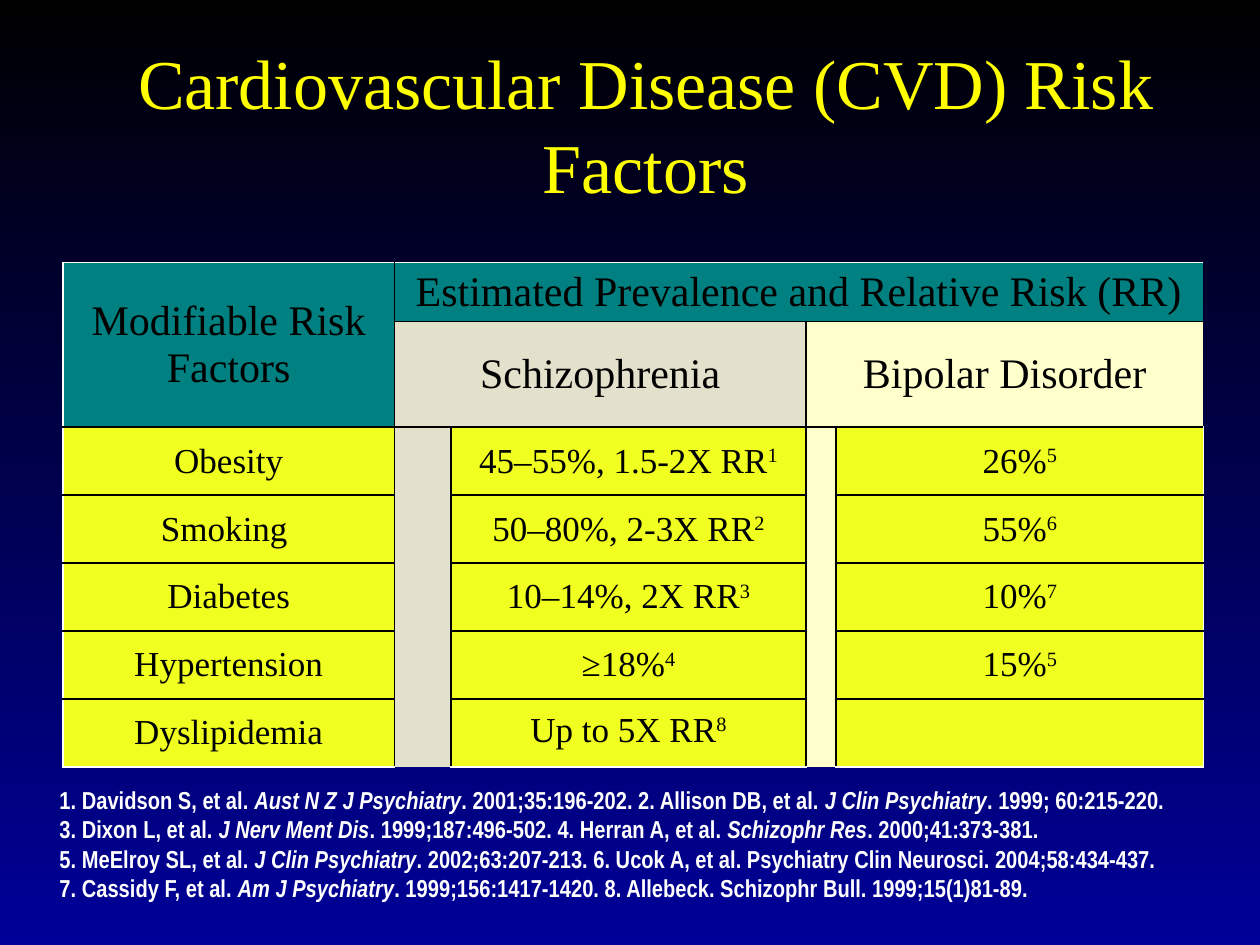
"""Build a slide on cardiovascular risk factors with a prevalence table."""
import pptx
import pptx.dml.color
import pptx.enum.text
import pptx.oxml
import pptx.oxml.ns
import pptx.util

Cm = pptx.util.Cm
Pt = pptx.util.Pt
ALIGN = pptx.enum.text.PP_ALIGN
MIDDLE = pptx.enum.text.MSO_ANCHOR.MIDDLE
SERIF, NARROW = "Times New Roman", "Arial Narrow"
BLACK, WHITE, YELLOW = "000000", "FFFFFF", "FFFF00"
TEAL, BEIGE, CREAM, LEMON = "008080", "E3E0CB", "FFFFCC", "F0FF20"

WIDTHS = [6.68, 1.14, 7.16, 0.58, 7.4]
HEIGHTS = [1.19, 2.13] + [1.37] * 5
FACTORS = [
    ("Obesity", "45–55%, 1.5-2X RR|1", "26%|5"),
    ("Smoking ", "50–80%, 2-3X RR|2", "55%|6"),
    ("Diabetes", "10–14%, 2X RR|3", "10%|7"),
    ("Hypertension", "≥18%|4", "15%|5"),
    ("Dyslipidemia", "Up to 5X RR|8", ""),
]
REFERENCES = [
    "1. Davidson S, et al. |Aust N Z J Psychiatry|. 2001;35:196-202. "
    "2. Allison DB, et al. |J Clin Psychiatry|. 1999; 60:215-220. ",
    "3. Dixon L, et al. |J Nerv Ment Dis|. 1999;187:496-502. "
    "4. Herran A, et al. |Schizophr Res|. 2000;41:373-381. ",
    "5. MeElroy SL, et al. |J Clin Psychiatry|. 2002;63:207-213. "
    "6. Ucok A, et al. Psychiatry Clin Neurosci. 2004;58:434-437. ",
    "7. Cassidy F, et al. |Am J Psychiatry|. 1999;156:1417-1420. "
    "8. Allebeck. Schizophr Bull. 1999;15(1)81-89.",
]


def rgb(value):
    return pptx.dml.color.RGBColor.from_string(value)


class Deck:
    def __init__(self):
        self.prs = pptx.Presentation()
        self.prs.slide_width, self.prs.slide_height = Cm(25.4), Cm(19.05)
        self.s = self.prs.slides.add_slide(self.prs.slide_layouts[5])

    def background(self, top, bottom):
        fill = self.s.background.fill
        fill.gradient()
        fill.gradient_angle = 270
        for stop, color in zip(fill.gradient_stops, (top, bottom)):
            stop.color.rgb = rgb(color)

    def style(self, r, font, size, color, bold=False):
        r.font.name, r.font.size, r.font.bold = font, Pt(size), bold
        r.font.color.rgb = rgb(color)

    def add_runs(self, p, text, mark, *style):
        for i, part in enumerate(text.split("|")):
            r = p.add_run()
            r.text = part
            self.style(r, *style)
            if i % 2:
                mark(r)

    def italic(self, r):
        r.font.italic = True

    def superscript(self, r):
        r._r.get_or_add_rPr().set("baseline", "30000")

    def title(self, text, x, y, w, h):
        sp = self.s.shapes.title
        sp.left, sp.top, sp.width, sp.height = Cm(x), Cm(y), Cm(w), Cm(h)
        tf = sp.text_frame
        tf.text = text
        tf.auto_size = pptx.enum.text.MSO_AUTO_SIZE.NONE
        tf.vertical_anchor = MIDDLE
        p = tf.paragraphs[0]
        p.alignment = ALIGN.CENTER
        self.style(p.runs[0], SERIF, 40, YELLOW)

    def references(self, lines, x, y, w, h):
        tf = self.s.shapes.add_textbox(Cm(x), Cm(y), Cm(w), Cm(h)).text_frame
        tf.word_wrap = True
        p = tf.paragraphs[0]
        for i, line in enumerate(lines):
            if i:
                p.add_line_break()
            self.add_runs(p, line, self.italic, NARROW, 14, WHITE, True)

    def table(self, x, y, widths, heights):
        frame = self.s.shapes.add_table(len(heights), len(widths), Cm(x), Cm(y),
                                        Cm(sum(widths)), Cm(sum(heights)))
        self.tbl = frame.table
        self.tbl.first_row = self.tbl.horz_banding = False
        style_id = self.tbl._tbl.tblPr.find(pptx.oxml.ns.qn("a:tableStyleId"))
        style_id.text = "{2D5ABB26-0587-4C30-8999-92F81FD0307C}"
        for col, w in zip(self.tbl.columns, widths):
            col.width = Cm(w)
        for row, h in zip(self.tbl.rows, heights):
            row.height = Cm(h)

    def border(self, cell, edges):
        tcPr = cell._tc.get_or_add_tcPr()
        for i, (side, color) in enumerate(edges):
            tcPr.insert(i, pptx.oxml.parse_xml(
                f'<a:ln{side} {pptx.oxml.ns.nsdecls("a")} w="12700"><a:solidFill>'
                f'<a:srgbClr val="{color}"/></a:solidFill></a:ln{side}>'))

    def block(self, row, col, rows, cols, fill, text="", size=20, skip=""):
        """Fill a cell or merged area and rule its outer edges, white on the table rim."""
        last_row, last_col = row + rows - 1, col + cols - 1
        rim_row, rim_col = len(self.tbl.rows) - 1, len(self.tbl.columns) - 1
        for i in range(row, last_row + 1):
            for j in range(col, last_col + 1):
                sides = [("L", j == col, j == 0), ("R", j == last_col, j == rim_col),
                         ("T", i == row, i == 0), ("B", i == last_row, i == rim_row)]
                cell = self.tbl.cell(i, j)
                cell.fill.solid()
                cell.fill.fore_color.rgb = rgb(fill)
                self.border(cell, [(side, WHITE if rim else BLACK)
                                   for side, outer, rim in sides if outer and side != skip])
        cell = self.tbl.cell(row, col)
        if rows * cols > 1:
            cell.merge(self.tbl.cell(last_row, last_col))
        cell.vertical_anchor = MIDDLE
        p = cell.text_frame.paragraphs[0]
        p.alignment = ALIGN.CENTER
        if text:
            self.add_runs(p, text, self.superscript, SERIF, size, BLACK)
        return p


def main():
    deck = Deck()
    deck.background(BLACK, "000099")
    deck.title("Cardiovascular Disease (CVD) Risk Factors", 1.27, 0.9, 23.5, 3.17)
    deck.table(1.27, 5.29, WIDTHS, HEIGHTS)
    deck.block(0, 0, 2, 1, TEAL, "Modifiable Risk Factors", 24)
    deck.block(0, 1, 1, 4, TEAL, "Estimated Prevalence and Relative Risk (RR)", 24)
    for col, name, fill in ((1, "Schizophrenia", BEIGE), (3, "Bipolar Disorder", CREAM)):
        deck.block(1, col, 1, 2, fill, name, 24, skip="B")
        deck.block(2, col, len(FACTORS), 1, fill, skip="T")
    for row, texts in enumerate(FACTORS, 2):
        for col, text in zip((0, 2, 4), texts):
            p = deck.block(row, col, 1, 1, LEMON, text)
            if text.startswith("Up to"):
                p.line_spacing = 0.8
    deck.references(REFERENCES, 0.95, 15.7, 23.5, 2.77)
    deck.prs.save("out.pptx")


if __name__ == "__main__":
    main()
